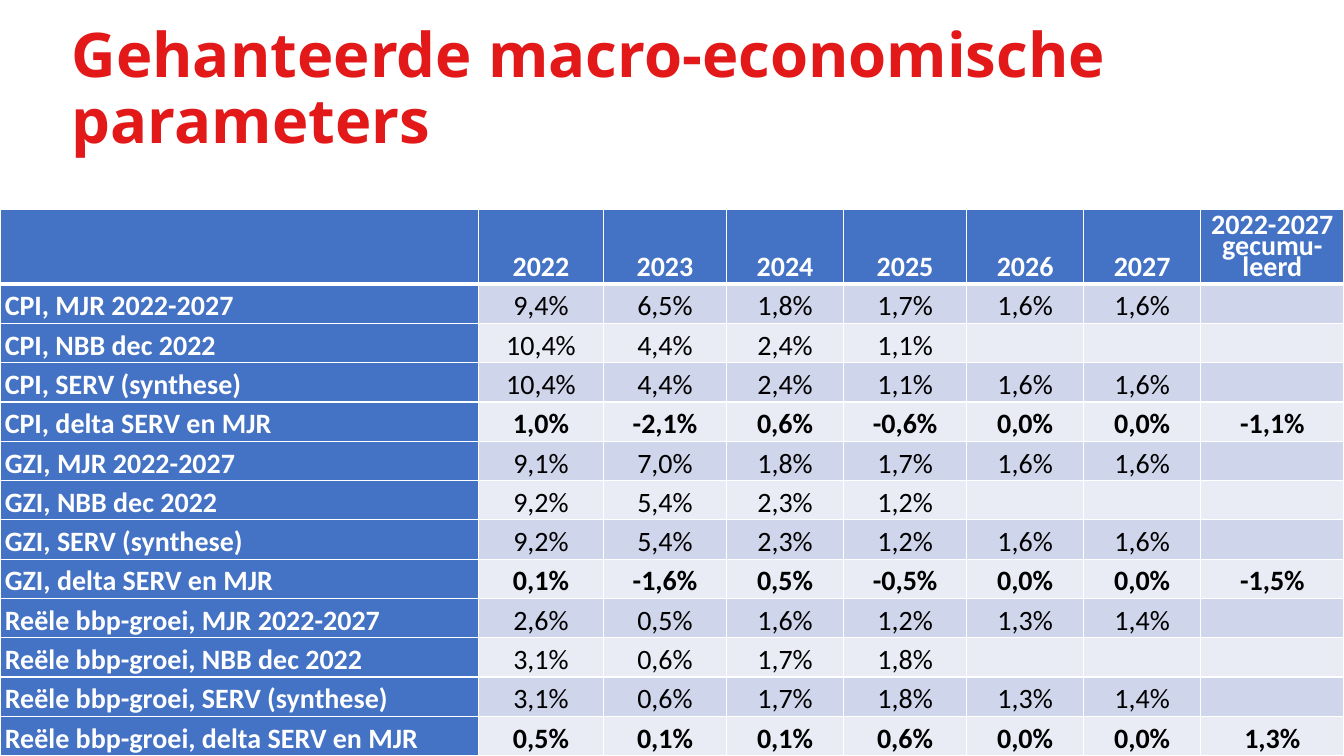
from lxml.etree import SubElement
from pptx import Presentation
from pptx.dml.color import RGBColor
from pptx.enum.text import MSO_ANCHOR, MSO_AUTO_SIZE, PP_ALIGN
from pptx.oxml.ns import qn
from pptx.util import Cm, Pt

HUES = {"red": "E31818", "blue": "4472C4", "dark": "CFD5EA",
        "pale": "E9EBF5", "white": "FFFFFF", "black": "000000"}
WIDTHS = [12.06, 3.15, 3.1, 2.95, 3.1, 2.95, 2.95, 3.61]
HEAD = ["", "2022", "2023", "2024", "2025", "2026", "2027",
        "2022-2027 gecumu-leerd"]
KINDS = ["MJR 2022-2027", "NBB dec 2022", "SERV (synthese)",
         "delta SERV en MJR"]
RATES = {
    "CPI": ["9,4% 6,5% 1,8% 1,7% 1,6% 1,6%",
            "10,4% 4,4% 2,4% 1,1%",
            "10,4% 4,4% 2,4% 1,1% 1,6% 1,6%",
            "1,0% -2,1% 0,6% -0,6% 0,0% 0,0% -1,1%"],
    "GZI": ["9,1% 7,0% 1,8% 1,7% 1,6% 1,6%",
            "9,2% 5,4% 2,3% 1,2%",
            "9,2% 5,4% 2,3% 1,2% 1,6% 1,6%",
            "0,1% -1,6% 0,5% -0,5% 0,0% 0,0% -1,5%"],
    "Reële bbp-groei": ["2,6% 0,5% 1,6% 1,2% 1,3% 1,4%",
                        "3,1% 0,6% 1,7% 1,8%",
                        "3,1% 0,6% 1,7% 1,8% 1,3% 1,4%",
                        "0,5% 0,1% 0,1% 0,6% 0,0% 0,0% 1,3%"],
}


def apply(item, style):
    """Set each value of a style on an item."""
    for name, value in style.items():
        setattr(item, name, value)


class Deck:
    """Holds the style and the current slide."""

    frame = {"word_wrap": True, "auto_size": MSO_AUTO_SIZE.NONE,
             "vertical_anchor": MSO_ANCHOR.BOTTOM}
    lead = {"alignment": PP_ALIGN.LEFT, "line_spacing": 0.9,
            "space_before": Pt(10)}
    box = {"vertical_anchor": MSO_ANCHOR.BOTTOM,
           "margin_left": Cm(0.12), "margin_right": Cm(0.12),
           "margin_top": 0, "margin_bottom": 0}
    line = {"line_spacing": Pt(15), "space_after": Pt(15)}

    def __init__(self, show):
        """Add a title-only slide."""
        self.slide = show.slides.add_slide(show.slide_layouts[5])

    def label(self, para, text, face, size, hue, bold):
        """Put one styled run in a paragraph."""
        run = para.add_run()
        run.text = text
        apply(run.font, {"name": face, "size": Pt(size), "bold": bold})
        run.font.color.rgb = RGBColor.from_string(HUES[hue])

    def title(self, text, left, top, width, height):
        """Place and format the title."""
        shape = self.slide.shapes.title
        apply(shape, {"left": Cm(left), "top": Cm(top),
                      "width": Cm(width), "height": Cm(height)})
        apply(shape.text_frame, self.frame)
        para = shape.text_frame.paragraphs[0]
        apply(para, self.lead)
        self.label(para, text, "Open Sans", 44, "red", True)

    def edge(self, cell, sides):
        """Draw white borders of the given widths."""
        props = cell._tc.get_or_add_tcPr()
        for side, width in sides.items():
            rule = SubElement(props, qn(f"a:ln{side}"), w=str(Pt(width)))
            fill = SubElement(rule, qn("a:solidFill"))
            SubElement(fill, qn("a:srgbClr"), val=HUES["white"])

    def cell(self, cell, text, row, col):
        """Fill one cell by its place in the table."""
        header = row == 0 or col == 0
        delta = row % len(KINDS) == 0
        apply(cell, self.box)
        self.edge(cell, {"L": 1, "R": 1, "T": 3 if row == 1 else 1,
                         "B": 3 if row == 0 else 1})
        back = "blue" if header else "dark" if row % 2 else "pale"
        cell.fill.solid()
        cell.fill.fore_color.rgb = RGBColor.from_string(HUES[back])
        para = cell.text_frame.paragraphs[0]
        apply(para, self.line)
        para.alignment = PP_ALIGN.CENTER if col else PP_ALIGN.LEFT
        if text:
            self.label(para, text, "Calibri", 20,
                       "white" if header else "black", header or delta)

    def table(self, rows, top, first, rest):
        """Build the table over the full width."""
        heights = [first] + [rest] * (len(rows) - 1)
        grid = self.slide.shapes.add_table(
            len(rows), len(WIDTHS), 0, Cm(top),
            Cm(sum(WIDTHS)), Cm(sum(heights))).table
        for part, width in zip(grid.columns, WIDTHS):
            part.width = Cm(width)
        for part, height in zip(grid.rows, heights):
            part.height = Cm(height)
        for row, texts in enumerate(rows):
            for col in range(len(WIDTHS)):
                text = texts[col] if col < len(texts) else ""
                self.cell(grid.cell(row, col), text, row, col)


def main():
    """Build and save the slide."""
    show = Presentation()
    apply(show, {"slide_width": Cm(33.87), "slide_height": Cm(19.05)})
    deck = Deck(show)
    deck.title("Gehanteerde macro-economische parameters",
               1.55, 1.55, 30.78, 2.54)
    rows = [HEAD] + [[f"{name}, {kind}", *rates.split()]
                     for name, lines in RATES.items()
                     for kind, rates in zip(KINDS, lines)]
    deck.table(rows, 5.28, 1.88, 0.99)
    show.save("out.pptx")


if __name__ == "__main__":
    main()
